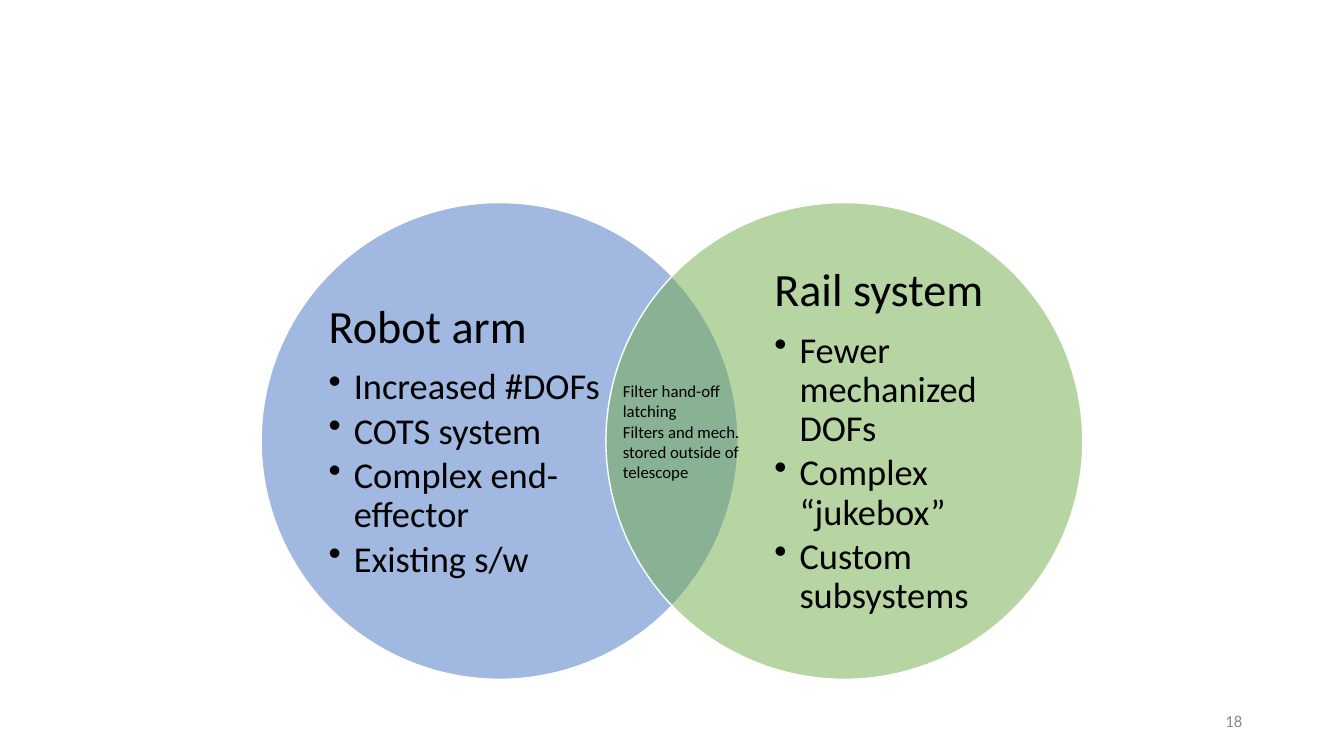
import pptx
import pptx.util
import pptx.dml.color
import pptx.enum.shapes
import pptx.enum.text
from lxml import etree

Inches, Pt = pptx.util.Inches, pptx.util.Pt
RGB = pptx.dml.color.RGBColor.from_string
ALIGN = pptx.enum.text.PP_ALIGN
ANCHOR = pptx.enum.text.MSO_ANCHOR

# Content: circle left edge, text left edge, colour name, heading, bullets
SYSTEMS = [
    dict(left=2.59, text_left=3.26, color="robot", heading="Robot arm",
         bullets=["Increased #DOFs", "COTS system", "Complex end-effector", "Existing s/w"]),
    dict(left=6.01, text_left=7.68, color="rail", heading="Rail system",
         bullets=["Fewer mechanized DOFs", "Complex “jukebox”", "Custom subsystems"]),
]
SHARED = ["Filter hand-off latching", "Filters and mech. stored outside of telescope"]
SLIDE_NUMBER = "18"

THEME = dict(
    font="Calibri",
    colors=dict(robot="4472C4", rail="70AD47", outline="FFFFFF", text="000000", number="8C8C8C"),
    sizes=dict(heading=33, bullet=26, small=12),
)
CIRCLE_TOP, DIAMETER = 2.01, 4.73
TEXT_TOP, TEXT_WIDTH, TEXT_HEIGHT = 2.57, 2.73, 3.62
BULLET_INDENT = 0.25


def add_circle(slide, left, color):
    circle = slide.shapes.add_shape(
        pptx.enum.shapes.MSO_SHAPE.OVAL,
        Inches(left), Inches(CIRCLE_TOP), Inches(DIAMETER), Inches(DIAMETER))
    circle.shadow.inherit = False
    circle.fill.solid()
    circle.fill.fore_color.rgb = RGB(THEME["colors"][color])
    fill_color = circle.fill._xPr.find(".//" + pptx.oxml.ns.qn("a:srgbClr"))
    etree.SubElement(fill_color, pptx.oxml.ns.qn("a:alpha"), val="50000")
    circle.line.color.rgb = RGB(THEME["colors"]["outline"])
    circle.line.width = Pt(1)


def add_text_frame(slide, left, top, width, height, anchor=ANCHOR.MIDDLE, inset=None):
    box = slide.shapes.add_textbox(Inches(left), Inches(top), Inches(width), Inches(height))
    frame = box.text_frame
    frame.word_wrap = True
    frame.vertical_anchor = anchor
    if inset is not None:
        frame.margin_left = frame.margin_right = Inches(inset)
        frame.margin_top = frame.margin_bottom = Inches(inset)
    return frame


def add_text(frame, text, size="small", color="text", align=ALIGN.LEFT,
             line_spacing=1.0, space_after=0, bullet=False):
    first = frame.paragraphs[0]
    paragraph = frame.add_paragraph() if first.runs else first
    paragraph.alignment = align
    paragraph.line_spacing = line_spacing
    paragraph.space_after = Pt(space_after)
    run = paragraph.add_run()
    run.text = text
    run.font.name = THEME["font"]
    run.font.size = Pt(THEME["sizes"][size])
    run.font.color.rgb = RGB(THEME["colors"][color])
    if bullet:
        paragraph.level = 1
        properties = paragraph._p.get_or_add_pPr()
        properties.set("marL", str(Inches(BULLET_INDENT)))
        properties.set("indent", str(-Inches(BULLET_INDENT)))
        etree.SubElement(properties, pptx.oxml.ns.qn("a:buChar"), char="•")


def main():
    presentation = pptx.Presentation()
    presentation.slide_width, presentation.slide_height = Inches(13.33), Inches(7.5)
    slide = presentation.slides.add_slide(presentation.slide_layouts[6])

    # Overlapping circles with their lists
    for system in SYSTEMS:
        add_circle(slide, system["left"], system["color"])
        frame = add_text_frame(slide, system["text_left"], TEXT_TOP,
                               TEXT_WIDTH, TEXT_HEIGHT, inset=0)
        add_text(frame, system["heading"], size="heading", line_spacing=0.9, space_after=11)
        for item in system["bullets"]:
            add_text(frame, item, size="bullet", line_spacing=0.9, space_after=3.6, bullet=True)

    # Slide number
    frame = add_text_frame(slide, 9.42, 6.95, 3, 0.4)
    add_text(frame, SLIDE_NUMBER, color="number", align=ALIGN.RIGHT)

    # Shared features in the overlap
    frame = add_text_frame(slide, 6.08, 3.73, 1.37, 1.11, anchor=ANCHOR.TOP)
    frame.auto_size = pptx.enum.text.MSO_AUTO_SIZE.SHAPE_TO_FIT_TEXT
    for item in SHARED:
        add_text(frame, item)

    presentation.save("out.pptx")


if __name__ == "__main__":
    main()
